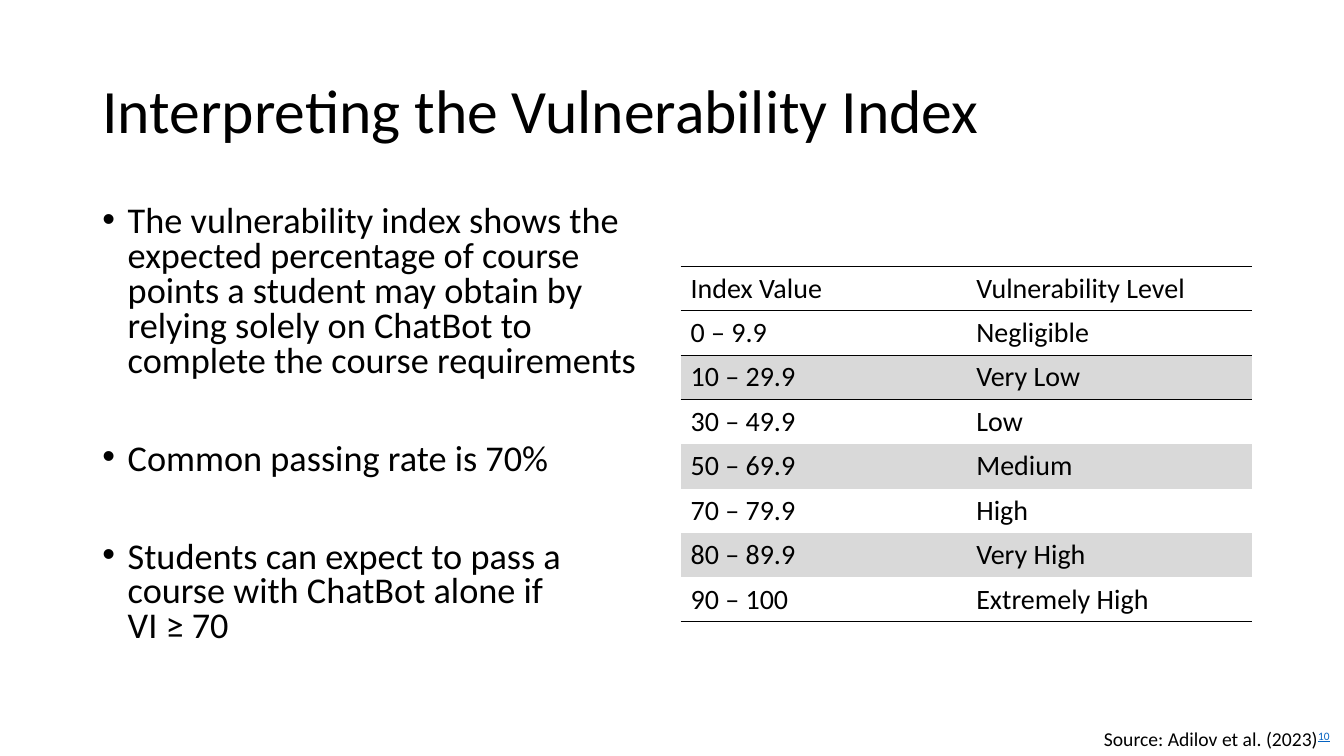
"""Build the slide that explains the vulnerability index."""
from lxml import etree
from pptx import Presentation
from pptx import util as u
from pptx.dml.color import RGBColor
from pptx.enum import text
from pptx.oxml.ns import qn

TITLE = "Interpreting the Vulnerability Index"
BULLETS = [
    ["The vulnerability index shows the expected percentage of course points a student "
     "may obtain by relying solely on ChatBot to complete the course requirements"],
    ["Common passing rate is 70%"],
    ["Students can expect to pass a course with ChatBot alone if", "VI ≥ 70"],
]
LEVELS = [
    ("Index Value", "Vulnerability Level"),
    ("0 – 9.9", "Negligible"),
    ("10 – 29.9", "Very Low"),
    ("30 – 49.9", "Low"),
    ("50 – 69.9", "Medium"),
    ("70 – 79.9", "High"),
    ("80 – 89.9", "Very High"),
    ("90 – 100", "Extremely High"),
]
SOURCE, NOTE = "Source: Adilov et al. (2023)", "10"
THEME = dict(font="Calibri", ink="000000", band="D9D9D9", link="0563C1",
             title=44, body=25.9, table=20, source=14)
NO_STYLE = "{2D5ABB26-0587-4C30-8999-92F81FD0307C}"
LEFT, COL_W, TABLE_X, ROW_H = 2.33, 14.4, 17.15, 1.12
RULED_BELOW = (0, 1, len(LEVELS) - 1)


def add_run(p, words, size, color="ink"):
    r = p.add_run()
    r.text = words
    r.font.name = THEME["font"]
    r.font.size = u.Pt(THEME[size])
    r.font.color.rgb = RGBColor.from_string(THEME[color])
    return r


def add_box(s, x, y, w, h, wrap=True):
    sp = s.shapes.add_textbox(u.Cm(x), u.Cm(y), u.Cm(w), u.Cm(h))
    sp.text_frame.word_wrap = wrap
    return sp.text_frame


def add_bullet(p):
    pPr = p._p.get_or_add_pPr()
    pPr.set("marL", str(u.Cm(0.64)))
    pPr.set("indent", str(-u.Cm(0.64)))
    etree.SubElement(pPr, qn("a:buFont")).set("typeface", "Arial")
    etree.SubElement(pPr, qn("a:buChar")).set("char", "•")


def add_rules(cell, sides):
    tcPr = cell._tc.get_or_add_tcPr()
    for i, side in enumerate(sides):
        ln = etree.Element(qn("a:ln" + side), w=str(u.Pt(1)))
        fill = etree.SubElement(ln, qn("a:solidFill"))
        etree.SubElement(fill, qn("a:srgbClr")).set("val", THEME["ink"])
        tcPr.insert(i, ln)


def add_levels(s):
    n_rows, n_cols = len(LEVELS), len(LEVELS[0])
    frame = s.shapes.add_table(n_rows, n_cols, u.Cm(TABLE_X), u.Cm(6.71),
                               u.Cm(COL_W), u.Cm(ROW_H * n_rows))
    table = frame.table
    table.first_row = table.horz_banding = False
    table._tbl.tblPr.find(qn("a:tableStyleId")).text = NO_STYLE
    for i, values in enumerate(LEVELS):
        table.rows[i].height = u.Cm(ROW_H)
        for j, value in enumerate(values):
            cell = table.cell(i, j)
            add_run(cell.text_frame.paragraphs[0], value, "table")
            if i and i % 2 == 0:
                cell.fill.solid()
                cell.fill.fore_color.rgb = RGBColor.from_string(THEME["band"])
            else:
                cell.fill.background()
            above = ["T"] if i == 0 or i - 1 in RULED_BELOW else []
            add_rules(cell, above + (["B"] if i in RULED_BELOW else []))


def main():
    prs = Presentation()
    prs.slide_width, prs.slide_height = u.Cm(33.87), u.Cm(19.05)
    s = prs.slides.add_slide(prs.slide_layouts[6])

    tf = add_box(s, LEFT, 1.01, 29.21, 3.68)
    tf.vertical_anchor = text.MSO_ANCHOR.MIDDLE
    p = tf.paragraphs[0]
    p.line_spacing = 0.9
    add_run(p, TITLE, "title")

    tf = add_box(s, LEFT, 5.07, COL_W, 12.09)
    for i, lines in enumerate(BULLETS):
        p = tf.add_paragraph() if i else tf.paragraphs[0]
        p.line_spacing = 0.8
        p.space_before = u.Pt(45 if i else 10)
        add_bullet(p)
        for k, line in enumerate(lines):
            if k:
                p.add_line_break()
            add_run(p, line, "body")

    add_levels(s)

    tf = add_box(s, 27.57, 18.19, 6.3, 0.86, wrap=False)
    tf.auto_size = text.MSO_AUTO_SIZE.SHAPE_TO_FIT_TEXT
    p = tf.paragraphs[0]
    add_run(p, SOURCE, "source")
    r = add_run(p, NOTE, "source", "link")
    r.font.underline = True
    r.font._element.set("baseline", "30000")

    prs.save("out.pptx")


if __name__ == "__main__":
    main()
